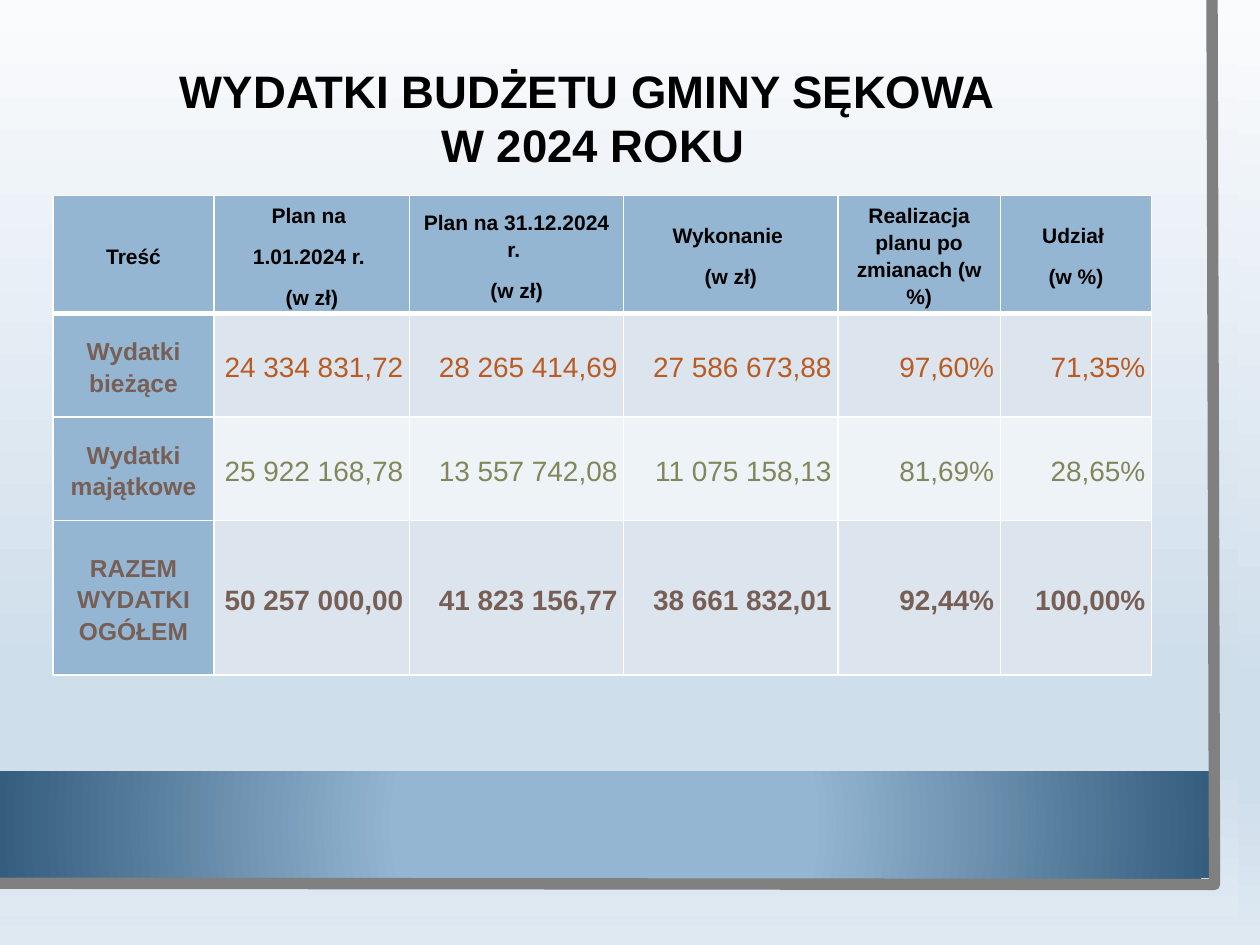
from lxml.etree import SubElement
from pptx import Presentation
from pptx.dml.color import RGBColor as RGB
from pptx.enum.shapes import MSO_SHAPE as SHAPE
from pptx.enum.text import MSO_ANCHOR as ANCHOR, PP_ALIGN as ALIGN
from pptx.oxml.ns import qn
from pptx.util import Inches, Pt

COLORS = {
    "black": "000000", "white": "FFFFFF", "frame": "808080",
    "blue": "94B6D2", "navy": "355D7E",
    "band": "DCE5EE", "light": "EEF3F7",
    "brown": "775F55", "orange": "B95B22", "olive": "81875A",
    "sky_top": "FAFBFD", "sky_mid": "CFDEEB", "sky_low": "DFE9F2",
}
SKY = [(0, "sky_top"), (74, "sky_mid"), (83, "sky_mid"), (100, "sky_low")]


class Deck:
    font = "Arial"

    def __init__(self, prs):
        self.s = prs.slides.add_slide(prs.slide_layouts[6])

    def gradient(self, fill, element, stops, radial=False):
        fill.gradient()
        grad = next(element.iter(qn("a:gradFill")))
        for child in list(grad):
            grad.remove(child)
        stop_list = SubElement(grad, qn("a:gsLst"))
        for pos, color in stops:
            stop = SubElement(stop_list, qn("a:gs"), pos=str(pos * 1000))
            SubElement(stop, qn("a:srgbClr"), val=COLORS[color])
        if radial:
            shade = SubElement(grad, qn("a:path"), {"path": "circle"})
            SubElement(shade, qn("a:fillToRect"), dict.fromkeys("ltrb", "50000"))
        else:
            SubElement(grad, qn("a:lin"), ang="5400000", scaled="0")

    def background(self, stops):
        self.gradient(self.s.background.fill, self.s.element, stops)

    def rect(self, x, y, w, h, stops, radial=False):
        sp = self.s.shapes.add_shape(
            SHAPE.RECTANGLE, Inches(x), Inches(y), Inches(w), Inches(h))
        sp.shadow.inherit = False
        sp.line.fill.background()
        self.gradient(sp.fill, sp.element, stops, radial)

    def polyline(self, points, color, width):
        start, *rest = [(Inches(x), Inches(y)) for x, y in points]
        builder = self.s.shapes.build_freeform(*start)
        builder.add_line_segments(rest, close=False)
        sp = builder.convert_to_shape()
        sp.shadow.inherit = False
        sp.fill.background()
        sp.line.color.rgb = RGB.from_string(COLORS[color])
        sp.line.width = Pt(width)

    def add_lines(self, tf, lines, size, color, bold, align, spacing=None, after=None):
        for i, line in enumerate(lines):
            p = tf.add_paragraph() if i else tf.paragraphs[0]
            p.alignment = align
            if spacing:
                p.line_spacing = spacing
                p.space_after = Pt(after)
            r = p.add_run()
            r.text = line
            r.font.name = self.font
            r.font.size = Pt(size)
            r.font.bold = bold
            r.font.color.rgb = RGB.from_string(COLORS[color])

    def text(self, x, y, w, h, lines, size, color):
        sp = self.s.shapes.add_textbox(Inches(x), Inches(y), Inches(w), Inches(h))
        tf = sp.text_frame
        tf.word_wrap = True
        tf.vertical_anchor = ANCHOR.MIDDLE
        self.add_lines(tf, lines, size, color, True, ALIGN.CENTER)

    def table(self, x, y, widths, heights):
        frame = self.s.shapes.add_table(
            len(heights), len(widths), Inches(x), Inches(y),
            Inches(sum(widths)), Inches(sum(heights)))
        for col, w in zip(frame.table.columns, widths):
            col.width = Inches(w)
        for row, h in zip(frame.table.rows, heights):
            row.height = Inches(h)
        return frame.table

    def cell(self, cell, lines, fill, size, color, bold, align, top=1, bottom=1):
        cell.margin_left = cell.margin_right = Inches(0.05)
        cell.margin_top, cell.margin_bottom = Inches(0.01), 0
        cell.vertical_anchor = ANCHOR.MIDDLE
        props = cell._tc.get_or_add_tcPr()
        for side, width in zip("LRTB", (1, 1, top, bottom)):
            ln = SubElement(props, qn("a:ln" + side), w=str(Pt(width)))
            solid = SubElement(ln, qn("a:solidFill"))
            SubElement(solid, qn("a:srgbClr"), val=COLORS["white"])
        cell.fill.solid()
        cell.fill.fore_color.rgb = RGB.from_string(COLORS[fill])
        self.add_lines(cell.text_frame, lines, size, color, bold, align, 1.15, 8)


HEADERS = [
    ["Treść"],
    ["Plan na ", "1.01.2024 r. ", "(w zł)"],
    ["Plan na 31.12.2024 r. ", "(w zł)"],
    ["Wykonanie ", "(w zł)"],
    ["Realizacja planu po zmianach (w %)"],
    ["Udział ", "(w %)"],
]
# Row label, values, value colour, bold values, fill
ROWS = [
    ("Wydatki bieżące",
     ["24 334 831,72", "28 265 414,69", "27 586 673,88", "97,60%", "71,35%"],
     "orange", False, "band"),
    ("Wydatki majątkowe",
     ["25 922 168,78", "13 557 742,08", "11 075 158,13", "81,69%", "28,65%"],
     "olive", False, "light"),
    ("RAZEM WYDATKI OGÓŁEM",
     ["50 257 000,00", "41 823 156,77", "38 661 832,01", "92,44%", "100,00%"],
     "brown", True, "band"),
]


def main():
    prs = Presentation()
    prs.slide_width, prs.slide_height = Inches(10), Inches(7.5)
    deck = Deck(prs)

    # Backdrop: sky panel, blue band and grey frame
    deck.background(SKY)
    deck.rect(0, 0, 9.83, 7.27, SKY)
    deck.rect(0, 6.12, 9.6, 0.85, [(34, "blue"), (100, "navy")], radial=True)
    deck.polyline([(9.62, 0), (9.64, 7.02), (-0.02, 7.01)], "frame", 6.5)

    # Title
    deck.text(0.28, 0.44, 8.86, 0.98,
              ["WYDATKI BUDŻETU GMINY SĘKOWA ", "W 2024 ROKU"], 26, "black")

    # Spending table
    table = deck.table(0.42, 1.55, [1.28, 1.55, 1.7, 1.7, 1.29, 1.2],
                       [0.94, 0.82, 0.82, 1.23])
    for c, lines in enumerate(HEADERS):
        deck.cell(table.cell(0, c), lines, "blue", 12, "black", True,
                  ALIGN.CENTER, bottom=3)
    for r, (label, values, color, bold, fill) in enumerate(ROWS, 1):
        top = 3 if r == 1 else 1
        deck.cell(table.cell(r, 0), [label], "blue", 14, "brown", True,
                  ALIGN.CENTER, top)
        for c, value in enumerate(values, 1):
            deck.cell(table.cell(r, c), [value], fill, 16, color, bold,
                      ALIGN.RIGHT, top)

    prs.save("out.pptx")


if __name__ == "__main__":
    main()
